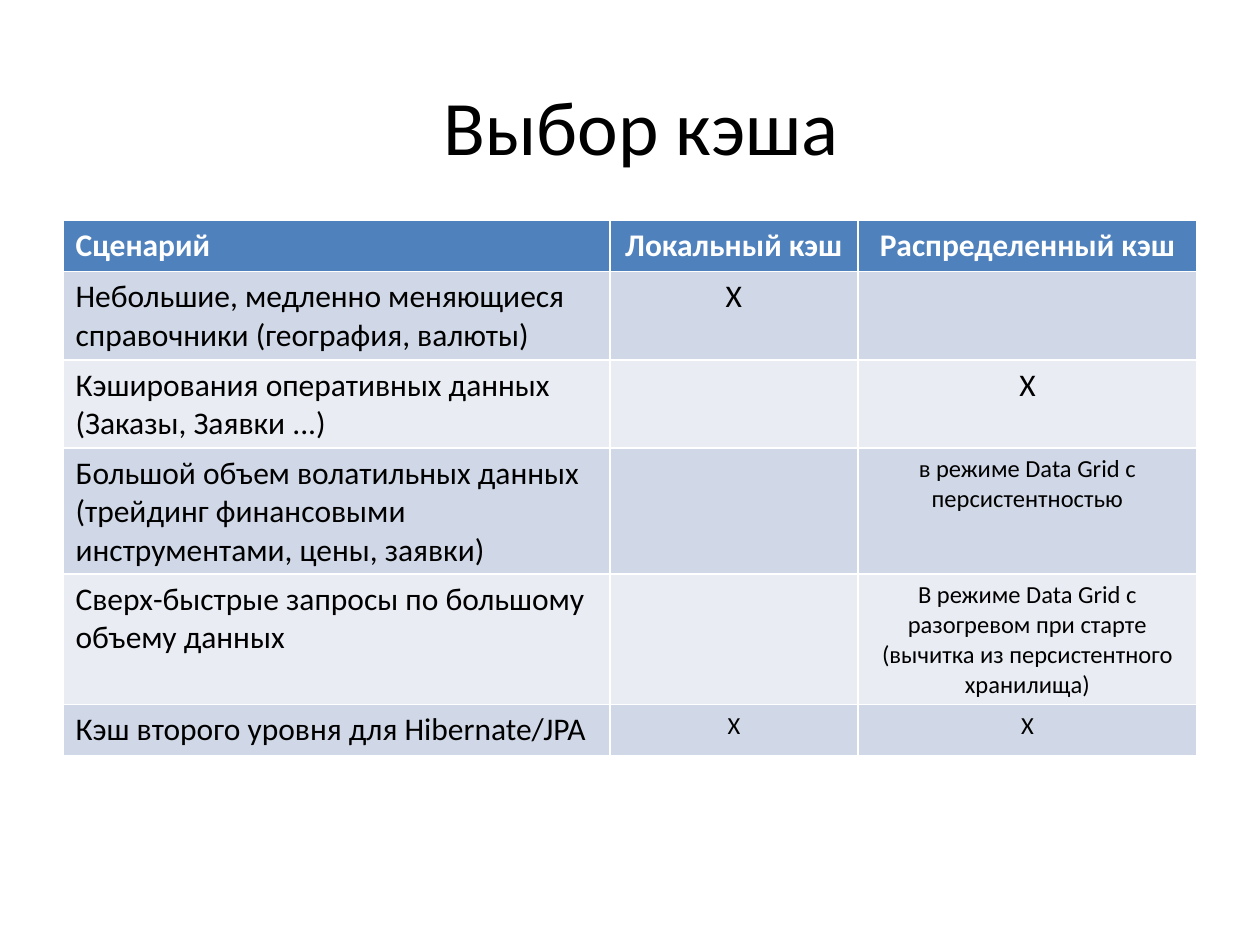
import pptx
import pptx.dml.color
import pptx.enum.text
import pptx.util

Pt = pptx.util.Pt
CENTER = pptx.enum.text.PP_ALIGN.CENTER
LEFT = pptx.enum.text.PP_ALIGN.LEFT
MIDDLE = pptx.enum.text.MSO_ANCHOR.MIDDLE

HEADER_FILL = "4F81BD"
BAND_FILLS = ("E9ECF3", "D0D8E7")
COLUMN_WIDTHS = (312.5, 141.75, 193.75)
ROW_HEIGHT = 29.2
ROWS = (
    ("Сценарий", "Локальный кэш", "Распределенный кэш"),
    ("Небольшие, медленно меняющиеся справочники (география, валюты)", "X", ""),
    ("Кэширования оперативных данных (Заказы, Заявки ...)", "", "X"),
    ("Большой объем волатильных данных (трейдинг финансовыми инструментами, цены, заявки)",
     "", "в режиме Data Grid c персистентностью"),
    ("Сверх-быстрые запросы по большому объему данных",
     "", "В режиме Data Grid с разогревом при старте (вычитка из персистентного хранилища)"),
    ("Кэш второго уровня для Hibernate/JPA", "X", "X"),
)
FIRST_SMALL_ROW = 3


def color(value):
    """Return the colour for a hex string."""
    return pptx.dml.color.RGBColor.from_string(value)


def style_paragraph(para, size, ink, align, bold=False):
    """Set the font and alignment of a paragraph."""
    para.alignment = align
    para.font.name = "Calibri"
    para.font.size = Pt(size)
    para.font.bold = bold
    para.font.color.rgb = color(ink)


def add_title(page, text):
    """Add the centred slide title."""
    box = page.shapes.add_textbox(Pt(42.5), Pt(26), Pt(648), Pt(90))
    frame = box.text_frame
    frame.word_wrap = True
    frame.vertical_anchor = MIDDLE
    frame.text = text
    style_paragraph(frame.paragraphs[0], 44, "000000", CENTER)


def fill_cell(cell, text, row, column):
    """Write and colour one cell according to its row and column."""
    header = row == 0
    small = row >= FIRST_SMALL_ROW and column > 0 and text
    cell.fill.solid()
    cell.fill.fore_color.rgb = color(HEADER_FILL if header else BAND_FILLS[row % 2])
    cell.text = text
    style_paragraph(cell.text_frame.paragraphs[0], 14 if small else 18,
                    "FFFFFF" if header else "000000",
                    CENTER if column else LEFT, header)


def add_scenario_table(page):
    """Add the table that matches scenarios with cache kinds."""
    table = page.shapes.add_table(
        len(ROWS), len(COLUMN_WIDTHS), Pt(36), Pt(126),
        Pt(sum(COLUMN_WIDTHS)), Pt(ROW_HEIGHT * len(ROWS))).table
    for column, width in zip(table.columns, COLUMN_WIDTHS):
        column.width = Pt(width)
    for row, texts in enumerate(ROWS):
        table.rows[row].height = Pt(ROW_HEIGHT)
        for column, text in enumerate(texts):
            fill_cell(table.cell(row, column), text, row, column)


def main():
    """Build and save the slide."""
    deck = pptx.Presentation()
    deck.slide_width, deck.slide_height = Pt(720), Pt(540)
    page = deck.slides.add_slide(deck.slide_layouts[6])
    add_title(page, "Выбор кэша")
    add_scenario_table(page)
    deck.save("out.pptx")


if __name__ == "__main__":
    main()
